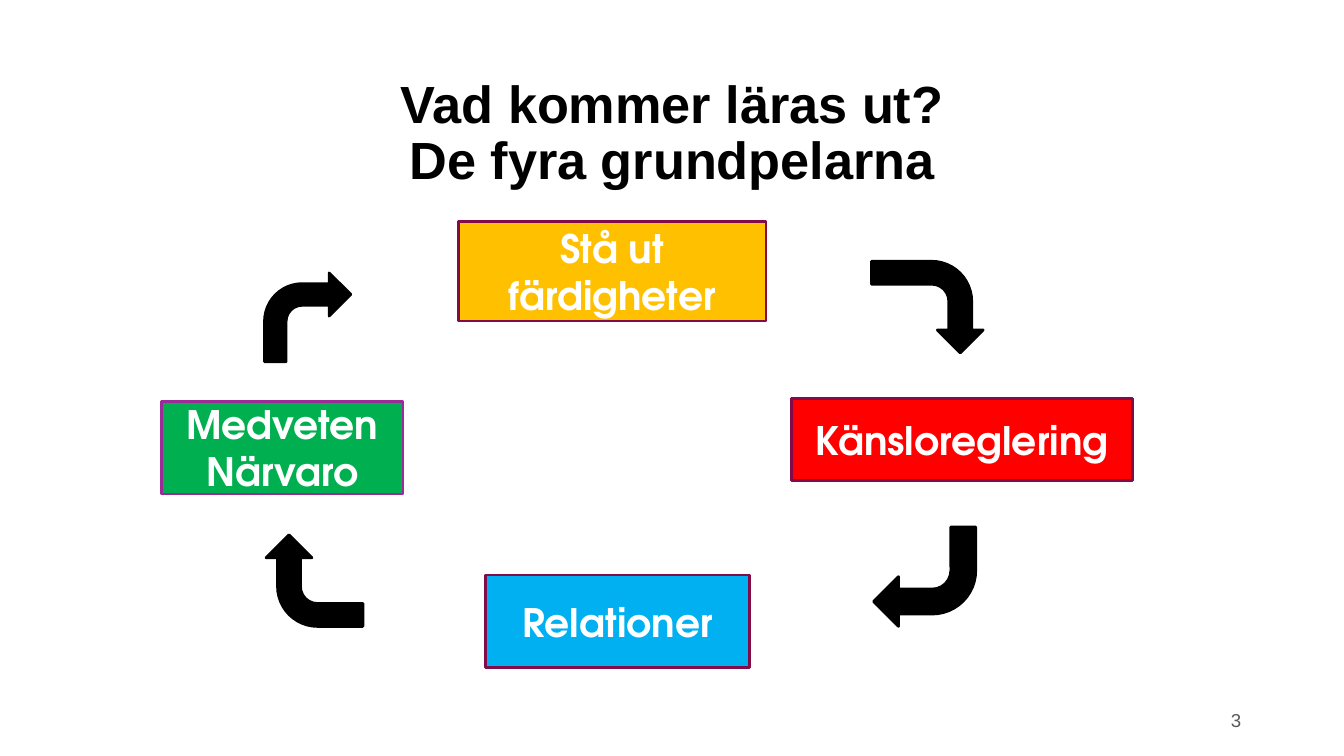
import pptx
import pptx.util
import pptx.dml.color
import pptx.enum.shapes
import pptx.enum.text

Cm = pptx.util.Cm
Pt = pptx.util.Pt
RGBColor = pptx.dml.color.RGBColor
Shape = pptx.enum.shapes.MSO_SHAPE
Align = pptx.enum.text.PP_ALIGN

BLACK = RGBColor(0x00, 0x00, 0x00)
WHITE = RGBColor(0xFF, 0xFF, 0xFF)
GREY = RGBColor(0x59, 0x59, 0x59)
GREEN = RGBColor(0x00, 0xB0, 0x50)
RED = RGBColor(0xFF, 0x00, 0x00)
BLUE = RGBColor(0x00, 0xB0, 0xF0)
YELLOW = RGBColor(0xFF, 0xC0, 0x00)
PURPLE = RGBColor(0x9B, 0x2C, 0x97)
WINE = RGBColor(0x82, 0x0C, 0x4A)

PILLARS = [
    ("Medveten Närvaro", (3.05, 7.59, 4.57, 1.75), GREEN, PURPLE),
    ("Känsloreglering", (14.96, 7.54, 6.45, 1.55), RED, WINE),
    ("Relationer", (9.17, 10.87, 5, 1.75), BLUE, WINE),
    ("Stå ut färdigheter", (8.66, 4.19, 5.82, 1.88), YELLOW, WINE),
]
CYCLE_ARROWS = [
    (5, 5.16, 1.63, 1.68),
    (16.66, 4.75, 1.73, 2.11),
    (16.51, 9.96, 1.93, 1.88),
    (5.08, 10.06, 1.73, 1.83),
]


class SlideBuilder:
    text_font = "Arial"
    pillar_font = "TeX Gyre Adventor"
    line_width = Pt(1.5)

    def __init__(self, slide):
        self.slide = slide

    def set_text(self, holder, text, font, size, color, bold, align):
        frame = holder.text_frame
        frame.text = text
        frame.word_wrap = True
        frame.auto_size = pptx.enum.text.MSO_AUTO_SIZE.NONE
        frame.vertical_anchor = pptx.enum.text.MSO_ANCHOR.MIDDLE
        frame.margin_left = frame.margin_right = Cm(0.19)
        frame.margin_top = frame.margin_bottom = Cm(0.1)
        paragraph = frame.paragraphs[0]
        paragraph.alignment = align
        for run in paragraph.runs:
            run.font.name = font
            run.font.size = Pt(size)
            run.font.bold = bold
            run.font.color.rgb = color
        return paragraph

    def title(self, text, box):
        heading = self.slide.shapes.title
        heading.left, heading.top, heading.width, heading.height = map(Cm, box)
        paragraph = self.set_text(heading, text, self.text_font, 28, BLACK, True, Align.CENTER)
        paragraph.line_spacing = 0.9

    def figure(self, kind, box, fill, outline):
        figure = self.slide.shapes.add_shape(kind, *map(Cm, box))
        figure.shadow.inherit = False
        figure.fill.solid()
        figure.fill.fore_color.rgb = fill
        figure.line.color.rgb = outline
        figure.line.width = self.line_width
        return figure

    def pillar(self, text, box, fill, outline):
        pillar = self.figure(Shape.RECTANGLE, box, fill, outline)
        self.set_text(pillar, text, self.pillar_font, 21, WHITE, True, Align.CENTER)

    def arrow(self, box, rotation):
        self.figure(Shape.BENT_ARROW, box, BLACK, BLACK).rotation = rotation

    def page_number(self, text, box):
        number = self.slide.shapes.add_textbox(*map(Cm, box))
        self.set_text(number, text, self.text_font, 10, GREY, False, Align.RIGHT)


def main():
    deck = pptx.Presentation()
    deck.slide_width = Cm(25.4)
    deck.slide_height = Cm(14.29)
    builder = SlideBuilder(deck.slides.add_slide(deck.slide_layouts[5]))
    builder.title("Vad kommer läras ut?\vDe fyra grundpelarna", (1.75, 0.76, 21.9, 3.56))
    for pillar in PILLARS:
        builder.pillar(*pillar)
    for quarter, box in enumerate(CYCLE_ARROWS):
        builder.arrow(box, 90 * quarter)
    builder.page_number("3", (17.93, 13.23, 5.72, 0.76))
    deck.save("out.pptx")


if __name__ == "__main__":
    main()
